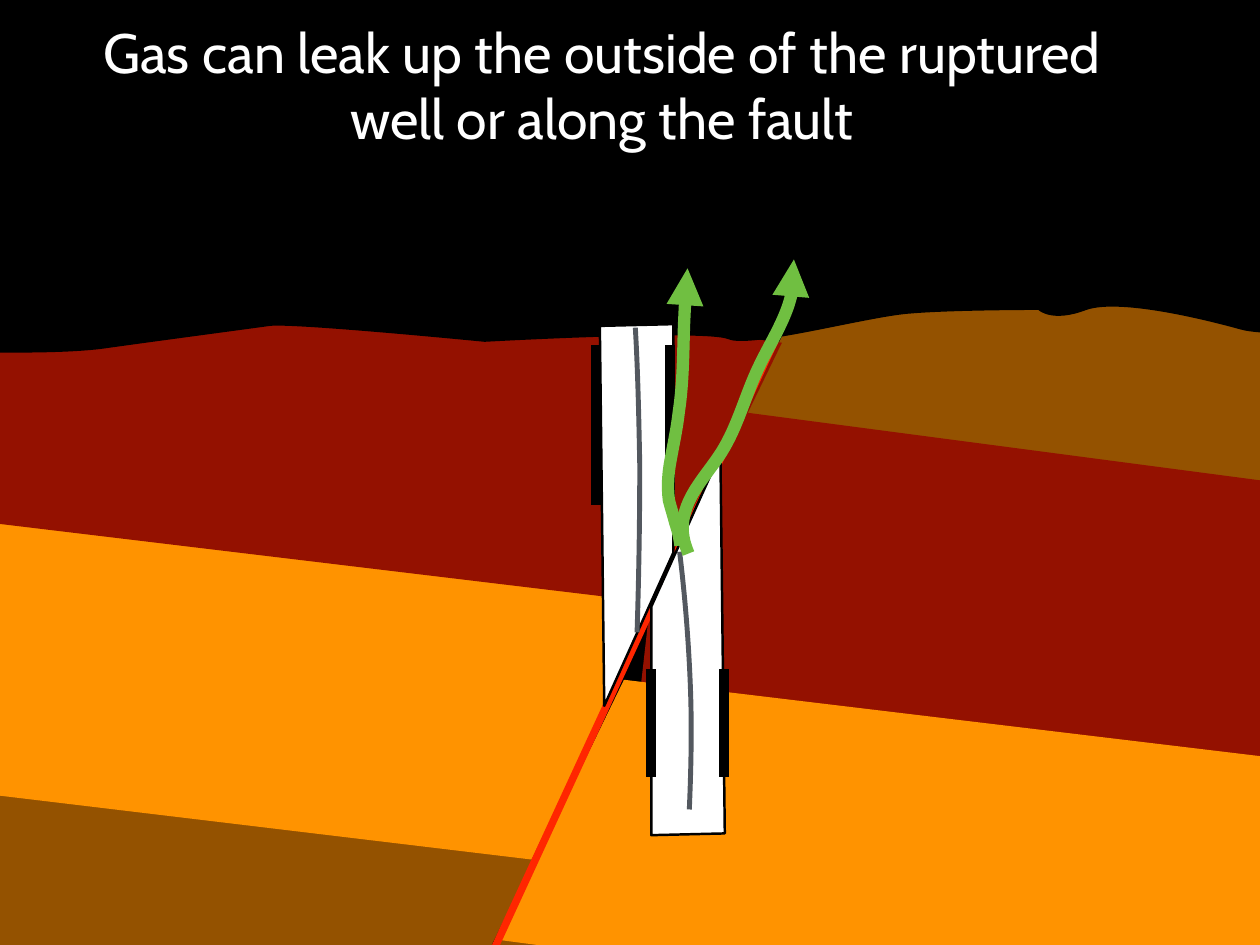
from lxml import etree
from pptx import Presentation
from pptx.dml.color import RGBColor
from pptx.enum.shapes import MSO_CONNECTOR
from pptx.enum.text import MSO_ANCHOR, MSO_AUTO_SIZE, PP_ALIGN
from pptx.oxml.ns import qn
from pptx.util import Inches, Pt

STRAIGHT = MSO_CONNECTOR.STRAIGHT
MIDDLE, CENTER = MSO_ANCHOR.MIDDLE, PP_ALIGN.CENTER
FIXED_SIZE = MSO_AUTO_SIZE.NONE
TITLE_ONLY = 5

# The slide is a grid of 1422 columns by 1067 rows; all lengths are in cells.
COLUMNS, ROWS = 1422, 1067
CELL = Inches(14.22) // COLUMNS

THEME = {
    "font": "Cabin", "title_size": 45, "title": "FFFFFF",
    "sky": "000000", "clay": "941100", "sand": "FF9300", "bedrock": "945200",
    "fault": ("FF2600", 6), "well": "FFFFFF", "well_edge": ("000000", 2),
    "pipe": ("53585F", 4), "casing": ("000000", 8), "gas": ("70BF41", 10),
}

deck = Presentation()
deck.slide_width, deck.slide_height = COLUMNS * CELL, ROWS * CELL
page = deck.slides.add_slide(deck.slide_layouts[TITLE_ONLY])
page.background.fill.solid()
page.background.fill.fore_color.rgb = RGBColor.from_string(THEME["sky"])


def draw_outline(path, fill=None, line=None, corner=(0, 0), turn=0):
    """Draw a path of points (2 numbers) and Bezier curves (6 numbers); close it if filled."""
    points = [((corner[0] + step[i]) * CELL, (corner[1] + step[i + 1]) * CELL)
              for step in path for i in range(0, len(step), 2)]
    builder = page.shapes.build_freeform(*points[0], scale=1)
    builder.add_line_segments(points[1:], close=fill is not None)
    shape = builder.convert_to_shape()
    shape.rotation = turn
    shape.shadow.inherit = False

    # Each curve takes over the three straight segments of its control points.
    segments = iter(list(shape.element.iter(qn("a:lnTo"))))
    for step in path[1:]:
        first = next(segments)
        if len(step) == 6:
            first.tag = qn("a:cubicBezTo")
            for extra in (next(segments), next(segments)):
                first.append(extra[0])
                extra.getparent().remove(extra)

    if fill:
        shape.fill.solid()
        shape.fill.fore_color.rgb = RGBColor.from_string(fill)
    else:
        shape.fill.background()
    if line:
        shape.line.color.rgb = RGBColor.from_string(line[0])
        shape.line.width = Pt(line[1])
    else:
        shape.line.fill.background()
    return shape


def draw_line(ends, line):
    connector = page.shapes.add_connector(STRAIGHT, *(value * CELL for value in ends))
    connector.line.color.rgb = RGBColor.from_string(line[0])
    connector.line.width = Pt(line[1])
    etree.SubElement(connector.element.spPr, qn("a:effectLst"))


# All rock layers are one block, tilted with the strata; half a turn puts it right of the fault.
BLOCK = [(7, 322), (0, 3), (918, 0), (816, 310)]
TILT, HALF_TURN = 7.7, 180
layers = [
    ("bedrock", (841, 242), HALF_TURN + TILT),
    ("clay", (734, 512), TILT),
    ("sand", (528, 899), HALF_TURN),
    ("bedrock", (-330, 900), TILT),
    ("sand", (-193, 614), TILT),
    ("clay", (-53, 324), TILT),
    ("bedrock", (443, 1087), HALF_TURN + TILT),
    ("sand", (579, 802), HALF_TURN + TILT),
]
for rock, corner, turn in layers:
    draw_outline(BLOCK, THEME[rock], corner=corner, turn=turn)

sky = [
    (-49, 397), (-74, 94), (1469, 112), (1483, 375),
    (1483, 375, 1425, 379, 1400, 372),
    (1375, 365, 1266, 336, 1226, 350),
    (1187, 365, 1172, 350, 1172, 350),
    (1172, 350, 1075, 350, 1028, 354),
    (981, 357, 847, 394, 822, 383),
    (796, 372, 547, 386, 547, 386),
    (547, 386, 334, 365, 305, 368),
    (276, 372, 171, 386, 114, 394),
    (56, 401, -49, 397, -49, 397),
]
draw_outline(sky, THEME["sky"])
draw_line((462, 1279, 874, 386), THEME["fault"])

# The lower half of the broken well is the upper half upside down.
WELL_HALF = [(0, 2), (5, 431), (83, 258), (83, 0)]
for corner, turn in (((677, 366), 0), ((735, 512), HALF_TURN)):
    draw_outline(WELL_HALF, THEME["well"], THEME["well_edge"], corner, turn)

lower_pipe = [(767, 623), (773, 672, 777, 722, 779, 771), (781, 819, 780, 867, 778, 914)]
upper_pipe = [(717, 370), (720, 422, 721, 473, 722, 525), (722, 588, 721, 651, 719, 714)]
for pipe, sides, bottom, top in (
    (lower_pipe, (817, 735), 877, 755),
    (upper_pipe, (756, 673), 570, 390),
):
    draw_outline(pipe, line=THEME["pipe"])
    for side in sides:
        draw_line((side, bottom, side, top), THEME["casing"])

gas_along_fault = [
    (777, 625),
    (772, 613, 769, 601, 771, 588),
    (775, 558, 798, 536, 814, 511),
    (833, 481, 841, 446, 857, 413),
    (868, 390, 882, 368, 890, 344),
    (895, 327, 897, 310, 896, 293),
]
gas_along_well = [
    (768, 616),
    (767, 607, 765, 599, 762, 590),
    (760, 582, 757, 573, 755, 565),
    (753, 550, 754, 534, 757, 519),
    (760, 502, 764, 484, 766, 466),
    (771, 433, 771, 401, 772, 368),
    (773, 346, 774, 325, 776, 303),
]
for leak in (gas_along_fault, gas_along_well):
    arrow = draw_outline(leak, line=THEME["gas"])
    stroke = arrow.element.spPr.find(qn("a:ln"))
    etree.SubElement(stroke, qn("a:tailEnd"), type="triangle")

title = page.shapes.title
page.shapes.element.append(title.element)  # in front of the sky
for name, cells in {"left": 90, "top": 19, "width": 1178, "height": 153}.items():
    setattr(title, name, cells * CELL)
frame = title.text_frame
frame_format = {"word_wrap": True, "auto_size": FIXED_SIZE, "vertical_anchor": MIDDLE}
frame_format.update({f"margin_{side}": 6 * CELL for side in ("left", "top", "right", "bottom")})
for name, value in frame_format.items():
    setattr(frame, name, value)
para = frame.paragraphs[0]
para.alignment = CENTER
span = para.add_run()
span.text = "Gas can leak up the outside of the ruptured well or along the fault"
for name, value in {"name": THEME["font"], "size": Pt(THEME["title_size"])}.items():
    setattr(span.font, name, value)
span.font.color.rgb = RGBColor.from_string(THEME["title"])

deck.save("out.pptx")
